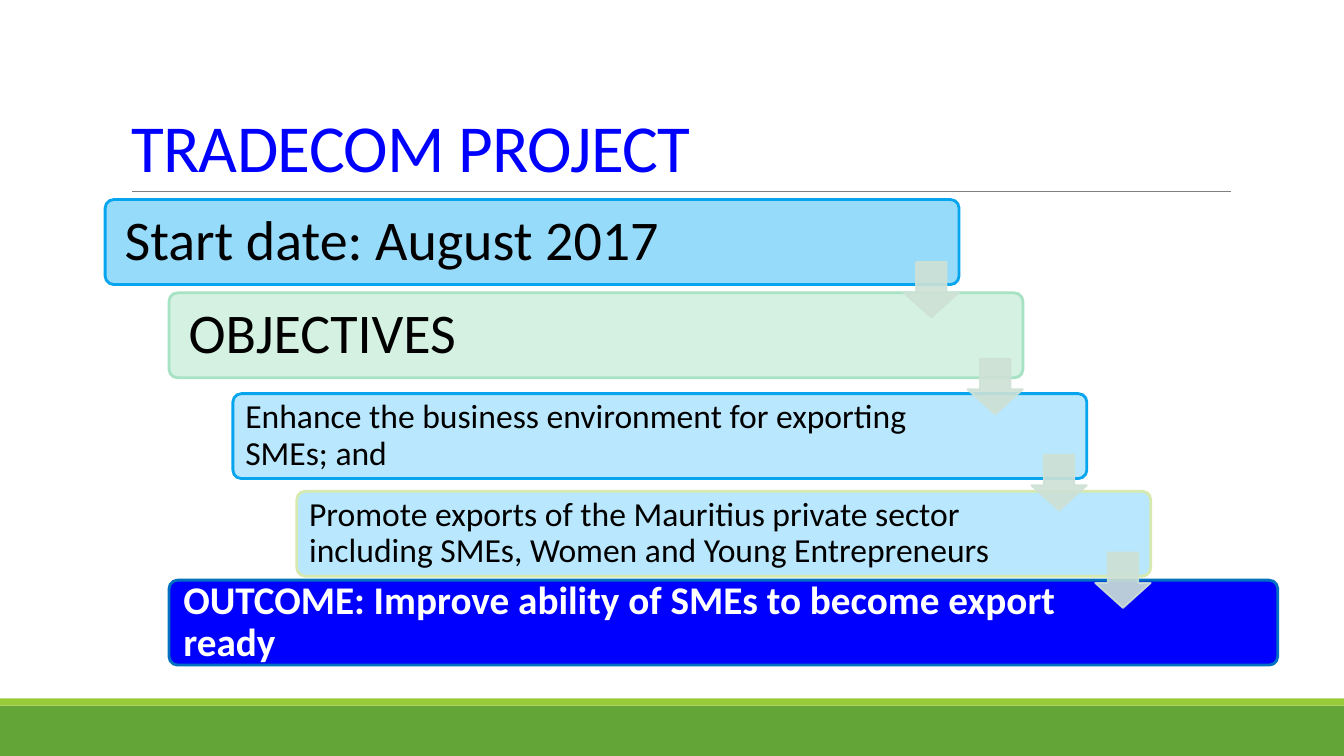
"""Build the TRADECOM project slide: a descending staircase from start date to outcome."""
import pptx
import pptx.dml.color
import pptx.enum.shapes
import pptx.enum.text
import pptx.oxml
import pptx.oxml.ns
import pptx.util
from pptx.util import Cm

SHAPE = pptx.enum.shapes.MSO_SHAPE
ANCHOR = pptx.enum.text.MSO_ANCHOR
LEFT = pptx.enum.text.PP_ALIGN.LEFT

COLOURS = {
    "band": "63A537", "strip": "99CB38", "rule": "808080", "blue": "0000FF",
    "black": "000000", "white": "FFFFFF", "sky": "97DBFB", "azure": "08A5EF",
    "mint": "D4F1E2", "mint_edge": "A8E2C5", "pale": "B9E7FD", "lime_edge": "D6EAAF",
    "outcome_edge": "0070C0", "arrow": "CEE1D5",
}
TITLE = "TRADECOM PROJECT"
STEPS = [
    dict(text="Start date: August 2017", level=0, top=5.03, width=21.52, text_width=18.95,
         inset=0.43, size=40, fill="sky", edge="azure", ink="black", bold=False),
    dict(text="OBJECTIVES", level=1, top=7.38, width=21.52, text_width=18.39,
         inset=0.43, size=40, fill="mint", edge="mint_edge", ink="black", bold=False),
    dict(text="Enhance the business environment for exporting SMEs; and", level=2, top=9.92,
         width=21.52, text_width=18.39, inset=0.25, size=24, fill="pale", edge="azure",
         ink="black", bold=False),
    dict(text="Promote exports of the Mauritius private sector including SMEs, "
              "Women and Young Entrepreneurs", level=3, top=12.38, width=21.52,
         text_width=18.39, inset=0.25, size=24, fill="pale", edge="lime_edge",
         ink="black", bold=False),
    dict(text="OUTCOME: Improve ability of SMEs to become export ready", level=1, top=14.62,
         width=27.94, text_width=23.93, inset=0.3, size=28, fill="blue",
         edge="outcome_edge", ink="white", bold=True),
]
ARROW_TOPS = [6.6, 9.04, 11.46, 13.92]
FOOTER = [("band", 17.78, 1.27), ("strip", 17.6, 0.18)]

SLIDE_WIDTH, SLIDE_HEIGHT = 33.87, 19.05
FIRST_LEFT, INDENT = 2.65, 1.61
STEP_HEIGHT, CORNER_INSET = 2.14, 0.06
ARROW_SIZE = 1.4


def colour(name):
    """Return the named colour."""
    return pptx.dml.color.RGBColor.from_string(COLOURS[name])


def apply(target, values):
    """Set each named attribute of the target."""
    for name, value in values.items():
        setattr(target, name, value)


def add_block(slide, preset, box, fill, edge=None, edge_width=0):
    """Add a flat preset shape with an optional outline."""
    block = slide.shapes.add_shape(preset, *[Cm(length) for length in box])
    block.shadow.inherit = False
    block.fill.solid()
    block.fill.fore_color.rgb = colour(fill)
    if edge:
        block.line.color.rgb = colour(edge)
        block.line.width = pptx.util.Pt(edge_width)
    else:
        block.line.fill.background()
    return block


def write(frame, text, frame_format, spacing, size, ink, bold=False):
    """Write one formatted left-aligned paragraph and return its run."""
    apply(frame, dict(frame_format, word_wrap=True,
                      auto_size=pptx.enum.text.MSO_AUTO_SIZE.NONE))
    paragraph = frame.paragraphs[0]
    apply(paragraph, dict(alignment=LEFT, line_spacing=spacing))
    run = paragraph.add_run()
    run.text = text
    apply(run.font, dict(name="Calibri", size=pptx.util.Pt(size), bold=bold))
    run.font.color.rgb = colour(ink)
    return run


def add_title(slide):
    """Place the title and the thin rule beneath it."""
    title = slide.shapes.title
    apply(title, dict(left=Cm(3.05), top=Cm(0.79), width=Cm(27.94), height=Cm(4.04)))
    run = write(title.text_frame, TITLE, dict(vertical_anchor=ANCHOR.BOTTOM), 0.85, 48, "blue")
    run.font._element.set("spc", "-50")
    rule = slide.shapes.add_connector(pptx.enum.shapes.MSO_CONNECTOR.STRAIGHT,
                                      Cm(3.33), Cm(4.82), Cm(31.01), Cm(4.82))
    rule.line.color.rgb = colour("rule")
    rule.line.width = pptx.util.Pt(0.5)
    rule._element.spPr.append(pptx.oxml.parse_xml(
        "<a:effectLst %s/>" % pptx.oxml.ns.nsdecls("a")))


def add_step(slide, step):
    """Add one bar of the staircase with its text."""
    left = FIRST_LEFT + INDENT * step["level"]
    bar = add_block(slide, SHAPE.ROUNDED_RECTANGLE,
                    (left, step["top"], step["width"], STEP_HEIGHT),
                    step["fill"], step["edge"], 2)
    bar.adjustments[0] = 0.1
    right_inset = step["width"] - 2 * CORNER_INSET - step["text_width"] + step["inset"]
    frame_format = dict(vertical_anchor=ANCHOR.MIDDLE, margin_left=Cm(step["inset"]),
                        margin_right=Cm(right_inset), margin_top=0, margin_bottom=0)
    write(bar.text_frame, step["text"], frame_format, 0.9,
          step["size"], step["ink"], step["bold"])


def add_arrow(slide, step, top):
    """Add a translucent arrow flush with the right end of a bar."""
    left = FIRST_LEFT + INDENT * step["level"] + step["width"] - ARROW_SIZE
    arrow = add_block(slide, SHAPE.DOWN_ARROW, (left, top, ARROW_SIZE, ARROW_SIZE),
                      "arrow", "arrow", 1.25)
    arrow.adjustments[0] = 0.55
    arrow.adjustments[1] = 0.45
    for paint in arrow._element.spPr.iter(pptx.oxml.ns.qn("a:srgbClr")):
        paint.append(pptx.oxml.parse_xml(
            '<a:alpha %s val="90000"/>' % pptx.oxml.ns.nsdecls("a")))


def main():
    """Assemble and save the slide."""
    deck = pptx.Presentation()
    apply(deck, dict(slide_width=Cm(SLIDE_WIDTH), slide_height=Cm(SLIDE_HEIGHT)))
    slide = deck.slides.add_slide(deck.slide_layouts[5])
    for fill, top, height in FOOTER:
        add_block(slide, SHAPE.RECTANGLE, (0, top, SLIDE_WIDTH, height), fill)
    add_title(slide)
    for step in STEPS:
        add_step(slide, step)
    for step, top in zip(STEPS, ARROW_TOPS):
        add_arrow(slide, step, top)
    deck.save("out.pptx")


if __name__ == "__main__":
    main()
